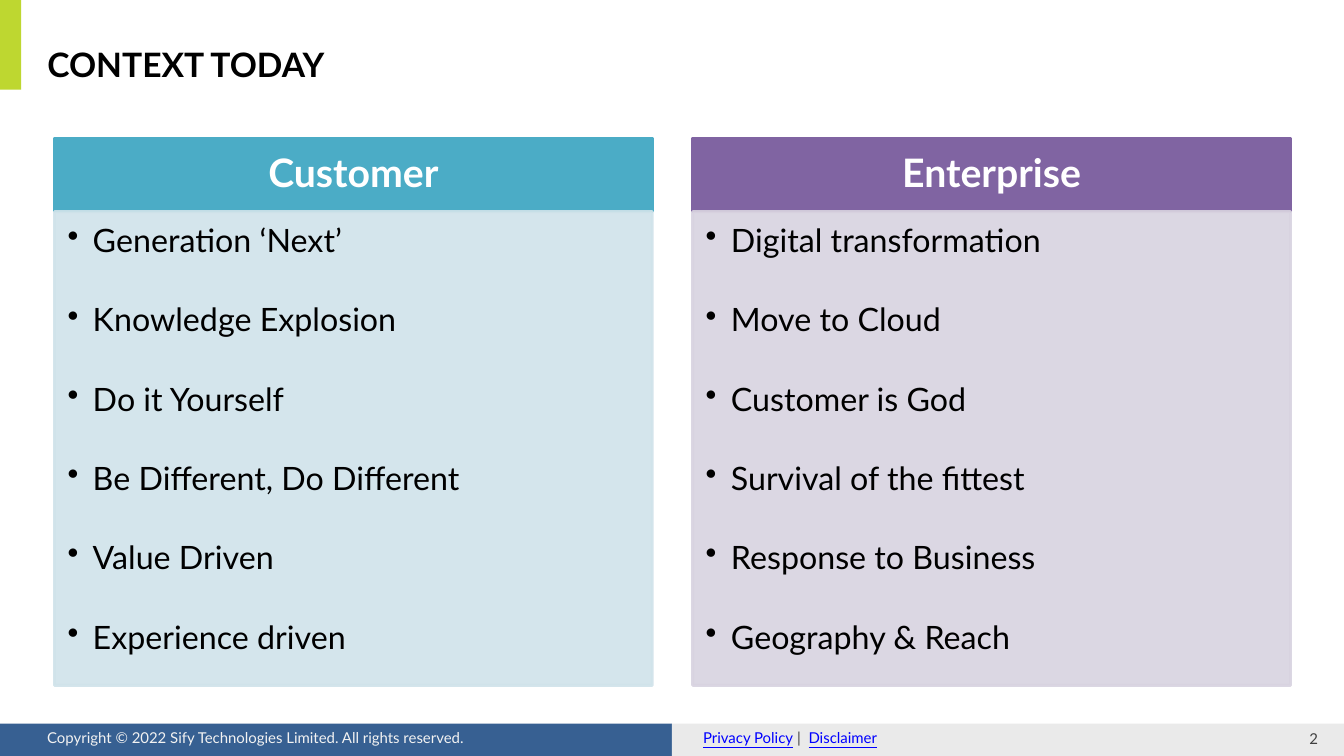
from lxml import etree
from pptx import Presentation
from pptx.dml.color import RGBColor
from pptx.enum.shapes import MSO_SHAPE
from pptx.enum.text import MSO_ANCHOR, PP_ALIGN
from pptx.oxml.ns import qn
from pptx.util import Inches, Pt

RECTANGLE = MSO_SHAPE.RECTANGLE
TOP, MIDDLE = MSO_ANCHOR.TOP, MSO_ANCHOR.MIDDLE
LEFT, CENTER = PP_ALIGN.LEFT, PP_ALIGN.CENTER

WHITE = RGBColor(0xFF, 0xFF, 0xFF)
BLACK = RGBColor(0x00, 0x00, 0x00)
LIME = RGBColor(0xBE, 0xD7, 0x30)
TEAL = RGBColor(0x4B, 0xAC, 0xC6)
PALE_TEAL = RGBColor(0xD0, 0xE3, 0xEA)
PURPLE = RGBColor(0x80, 0x64, 0xA2)
PALE_PURPLE = RGBColor(0xD8, 0xD3, 0xE0)
FOOTER_BLUE = RGBColor(0x37, 0x60, 0x92)
FOOTER_GRAY = RGBColor(0xEA, 0xEA, 0xEA)
FOOTER_LIGHT = RGBColor(0xF2, 0xF2, 0xF2)
FOOTER_DARK = RGBColor(0x40, 0x40, 0x40)
LINK_BLUE = RGBColor(0x00, 0x00, 0xFF)

FONT = "Lato"
SLIDE_W, SLIDE_H = 13.33, 7.5
FOOTER_SIZE = 10.7
HEADER_H = 0.73
CUSTOMER_POINTS = ["Generation ‘Next’", "Knowledge Explosion", "Do it Yourself",
                   "Be Different, Do Different", "Value Driven", "Experience driven"]
ENTERPRISE_POINTS = ["Digital transformation", "Move to Cloud", "Customer is God",
                     "Survival of the fittest", "Response to Business", "Geography & Reach"]


def add_run(paragraph, text, size, color, bold=False, underline=False):
    run = paragraph.add_run()
    run.text = text
    font = run.font
    font.name, font.size, font.bold, font.underline = FONT, Pt(size), bold, underline
    font.color.rgb = color


def add_bullet(paragraph, indent):
    properties = paragraph._p.get_or_add_pPr()
    properties.set("marL", str(Inches(indent)))
    properties.set("indent", str(-Inches(indent)))
    etree.SubElement(properties, qn("a:buChar")).set("char", "•")


def write(shape, paragraphs, *, size, color, bold=False, align=LEFT, anchor=TOP,
          insets=(0.1, 0.05, 0.1, 0.05), line_spacing=None, gap=None, bullet_indent=None):
    """Fill a shape with paragraphs, each a list of (text, run format) pairs."""
    frame = shape.text_frame
    frame.word_wrap = True
    frame.vertical_anchor = anchor
    (frame.margin_left, frame.margin_top,
     frame.margin_right, frame.margin_bottom) = map(Inches, insets)
    for index, runs in enumerate(paragraphs):
        paragraph = frame.add_paragraph() if index else frame.paragraphs[0]
        paragraph.alignment = align
        if line_spacing:
            paragraph.line_spacing = line_spacing
        if gap:
            paragraph.space_after = Pt(gap)
        if bullet_indent:
            add_bullet(paragraph, bullet_indent)
        for text, changes in runs:
            add_run(paragraph, text, **{"size": size, "color": color, "bold": bold, **changes})


def add_text(slide, box, paragraphs, **text_format):
    write(slide.shapes.add_textbox(*map(Inches, box)), paragraphs, **text_format)


def add_block(slide, box, color, outlined=False, opacity=None):
    block = slide.shapes.add_shape(RECTANGLE, *map(Inches, box))
    block.shadow.inherit = False
    block.fill.solid()
    block.fill.fore_color.rgb = color
    if outlined:
        block.line.color.rgb = color
        block.line.width = Pt(2)
    else:
        block.line.fill.background()
    if opacity:
        for color_element in block._element.spPr.iter(qn("a:srgbClr")):
            etree.SubElement(color_element, qn("a:alpha")).set("val", str(opacity * 1000))
    return block


def add_title(slide, box, title):
    left, top, width, height = box
    add_block(slide, (0, 0, 0.21, top + height), LIME)
    add_text(slide, box, [[(title, {})]], size=24, color=BLACK, bold=True,
             anchor=MIDDLE, insets=(0, 0.05, 0.1, 0.05))


def add_column(slide, box, heading, points, header_color, body_color):
    left, top, width, height = box
    header = add_block(slide, (left, top, width, HEADER_H), header_color, outlined=True)
    write(header, [[(heading, {})]], size=28, color=WHITE, bold=True, align=CENTER,
          anchor=MIDDLE, insets=(0.22, 0.12, 0.22, 0.12), line_spacing=0.9)
    body = add_block(slide, (left, top + HEADER_H, width, height - HEADER_H),
                     body_color, outlined=True, opacity=90)
    write(body, [[(point, {})] for point in points], size=23, color=BLACK,
          insets=(0.13, 0.13, 0.18, 0.2), line_spacing=0.9, gap=31.8, bullet_indent=0.25)


def add_footer(slide, box):
    left, top, width, height = box
    half = width / 2
    link = {"color": LINK_BLUE, "underline": True}
    add_block(slide, (left, top, half, height), FOOTER_BLUE)
    add_block(slide, (left + half, top, half, height), FOOTER_GRAY)
    add_text(slide, (left + 0.37, top, 5.67, 0.28),
             [[("Copyright © 2022 Sify Technologies Limited. All rights reserved.", {})]],
             size=FOOTER_SIZE, color=FOOTER_LIGHT)
    add_text(slide, (left + half + 0.21, top, 4.41, 0.28),
             [[("Privacy Policy", link), (" |  ", {}), ("Disclaimer", link)]],
             size=FOOTER_SIZE, color=FOOTER_DARK)
    add_text(slide, (left + width - 0.67, top + 0.04, 0.61, 0.21), [[("2", {})]],
             size=FOOTER_SIZE, color=FOOTER_DARK, align=CENTER, anchor=MIDDLE,
             insets=(0.13, 0.07, 0, 0.07))


def main():
    presentation = Presentation()
    presentation.slide_width, presentation.slide_height = Inches(SLIDE_W), Inches(SLIDE_H)
    slide = presentation.slides.add_slide(presentation.slide_layouts[6])
    add_footer(slide, (0, 7.18, SLIDE_W, SLIDE_H - 7.18))
    add_title(slide, (0.47, 0.39, 11.05, 0.5), "CONTEXT TODAY")
    add_column(slide, (0.54, 1.37, 5.93, 5.43), "Customer", CUSTOMER_POINTS, TEAL, PALE_TEAL)
    add_column(slide, (6.87, 1.37, 5.93, 5.43), "Enterprise", ENTERPRISE_POINTS,
               PURPLE, PALE_PURPLE)
    presentation.save("out.pptx")


if __name__ == "__main__":
    main()
